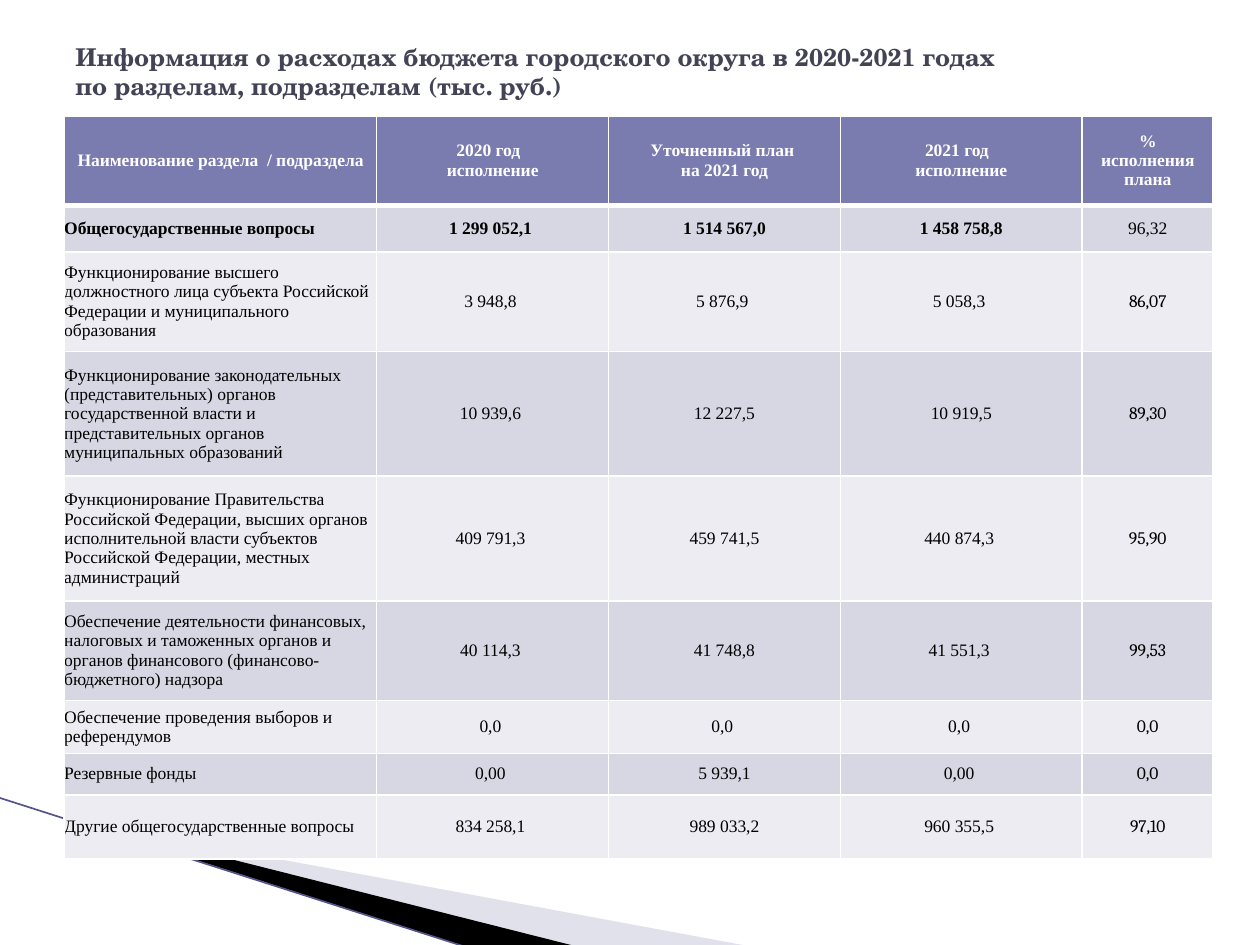
from dataclasses import dataclass

from lxml import etree
from pptx import Presentation
from pptx.dml.color import RGBColor
from pptx.enum.shapes import MSO_CONNECTOR
from pptx.enum.text import MSO_ANCHOR, PP_ALIGN
from pptx.oxml.ns import qn
from pptx.util import Inches, Pt

LEFT, CENTER = PP_ALIGN.LEFT, PP_ALIGN.CENTER
MIDDLE = MSO_ANCHOR.MIDDLE
STRAIGHT = MSO_CONNECTOR.STRAIGHT


@dataclass(frozen=True)
class Theme:
    title_color: str = "424456"
    header_fill: str = "7A7BAE"
    bands: tuple = ("D7D7E3", "ECECF2")
    white: str = "FFFFFF"
    black: str = "000000"
    wedge: str = "B6B6D1"
    accent_line: str = "53548A"
    title_font: str = "TeX Gyre Schola"
    table_font: str = "Times New Roman"
    percent_font: str = "Cambria"
    title_size: float = 14
    table_size: float = 10


THEME = Theme()

TITLE = ("Информация о расходах бюджета городского округа в 2020-2021 годах \v"
         "по разделам, подразделам (тыс. руб.)")
COLUMN_WIDTHS = (2.48, 1.84, 1.84, 1.92, 1.04)
ROW_HEIGHTS = (0.71, 0.37, 0.79, 0.99, 0.99, 0.79, 0.42, 0.33, 0.51)
HEADERS = (
    "Наименование раздела  / подраздела",
    "2020 год  \nисполнение",
    "Уточненный план \nна 2021 год",
    "2021 год  \nисполнение",
    "% исполнения плана",
)
EXPENSES = (
    ("Общегосударственные вопросы",
     "1 299 052,1 ", "1 514 567,0", "1 458 758,8", "96,32"),
    ("Функционирование высшего должностного лица субъекта Российской "
     "Федерации и муниципального образования",
     "3 948,8 ", "5 876,9 ", "5 058,3 ", "86,07"),
    ("Функционирование законодательных (представительных) органов "
     "государственной власти и представительных органов муниципальных "
     "образований",
     "10 939,6 ", "12 227,5", "10 919,5", "89,30"),
    ("Функционирование Правительства Российской Федерации, высших органов "
     "исполнительной власти субъектов Российской Федерации, местных "
     "администраций",
     "409 791,3 ", "459 741,5", "440 874,3 ", "95,90"),
    ("Обеспечение деятельности финансовых, налоговых и таможенных органов и "
     "органов финансового (финансово-бюджетного) надзора",
     "40 114,3 ", "41 748,8", "41 551,3 ", "99,53"),
    ("Обеспечение проведения выборов и референдумов",
     "0,0 ", "0,0 ", "0,0 ", "0,0"),
    ("Резервные фонды", "0,00 ", "5 939,1", "0,00 ", "0,0"),
    ("Другие общегосударственные вопросы",
     "834 258,1 ", "989 033,2", "960 355,5 ", "97,10"),
)


def rgb(value):
    return RGBColor.from_string(value)


def write_text(frame, text, color, align=LEFT, **font_format):
    """Fill a text frame, one paragraph for each line of text."""
    frame.text = text
    for paragraph in frame.paragraphs:
        paragraph.alignment = align
        for run in paragraph.runs:
            for name, value in font_format.items():
                setattr(run.font, name, value)
            run.font.color.rgb = rgb(color)


def add_wedge(slide, points, color, opacity=100):
    start, *rest = [(Inches(x), Inches(y)) for x, y in points]
    builder = slide.shapes.build_freeform(*start)
    builder.add_line_segments(rest, close=True)
    wedge = builder.convert_to_shape()
    wedge.shadow.inherit = False
    wedge.fill.solid()
    wedge.fill.fore_color.rgb = rgb(color)
    wedge.line.fill.background()
    if opacity < 100:
        fill_color = wedge.fill._xPr.find(qn("a:solidFill"))[0]
        etree.SubElement(fill_color, qn("a:alpha"), val=str(opacity * 1000))


def add_accent_line(slide, start, end):
    line = slide.shapes.add_connector(
        STRAIGHT, *[Inches(value) for value in start + end])
    line.line.color.rgb = rgb(THEME.accent_line)
    line.line.width = Pt(0.95)
    etree.SubElement(line._element.spPr, qn("a:effectLst"))


def add_title(slide):
    box = slide.shapes.add_textbox(
        Inches(0.5), Inches(0.13), Inches(9), Inches(0.87))
    frame = box.text_frame
    frame.word_wrap = True
    frame.vertical_anchor = MIDDLE
    write_text(frame, TITLE, THEME.title_color, name=THEME.title_font,
               size=Pt(THEME.title_size), bold=True)


def set_borders(cell, bottom_width):
    properties = cell._tc.get_or_add_tcPr()
    widths = {"lnL": 1, "lnR": 1, "lnT": 1, "lnB": bottom_width}
    for index, (side, width) in enumerate(widths.items()):
        border = etree.Element(qn(f"a:{side}"), w=str(Pt(width)))
        fill = etree.SubElement(border, qn("a:solidFill"))
        etree.SubElement(fill, qn("a:srgbClr"), val=THEME.white)
        properties.insert(index, border)


def format_cell(cell, row, column):
    """Set the fill, borders and insets that follow from a cell's place."""
    is_header = row == 0
    cell.fill.solid()
    cell.fill.fore_color.rgb = rgb(
        THEME.header_fill if is_header else THEME.bands[(row - 1) % 2])
    set_borders(cell, 3 if is_header else 1)
    cell.vertical_anchor = MIDDLE
    if not is_header:
        for side in ("left", "right", "top", "bottom"):
            setattr(cell, f"margin_{side}", 0)


def add_expense_table(slide):
    records = (HEADERS, *EXPENSES)
    table = slide.shapes.add_table(
        len(records), len(HEADERS), Inches(0.51), Inches(0.92),
        Inches(sum(COLUMN_WIDTHS)), Inches(sum(ROW_HEIGHTS))).table
    for column, width in zip(table.columns, COLUMN_WIDTHS):
        column.width = Inches(width)
    for row, height in zip(table.rows, ROW_HEIGHTS):
        row.height = Inches(height)

    percent_column = len(HEADERS) - 1
    for row, record in enumerate(records):
        for column, text in enumerate(record):
            cell = table.cell(row, column)
            format_cell(cell, row, column)
            is_percent = column == percent_column
            write_text(
                cell.text_frame, text,
                THEME.black if row else THEME.white,
                align=LEFT if row and column == 0 else CENTER,
                name=(THEME.percent_font if is_percent and row > 1
                      else THEME.table_font),
                size=Pt(THEME.table_size),
                bold=row == 0 or (row == 1 and not is_percent))


def main():
    presentation = Presentation()
    presentation.slide_width = Inches(10)
    presentation.slide_height = Inches(7.5)
    slide = presentation.slides.add_slide(presentation.slide_layouts[6])

    add_wedge(slide, [(0.55, 6.51), (5.95, 7.51), (4.56, 7.51), (0.55, 6.5)],
              THEME.wedge, opacity=40)
    add_wedge(slide, [(0.53, 6.49), (4.57, 7.51), (3.72, 7.52), (0.54, 6.5)],
              THEME.black)
    add_accent_line(slide, (-0.01, 6.33), (3.71, 7.52))
    add_expense_table(slide)
    add_title(slide)
    presentation.save("out.pptx")


if __name__ == "__main__":
    main()
